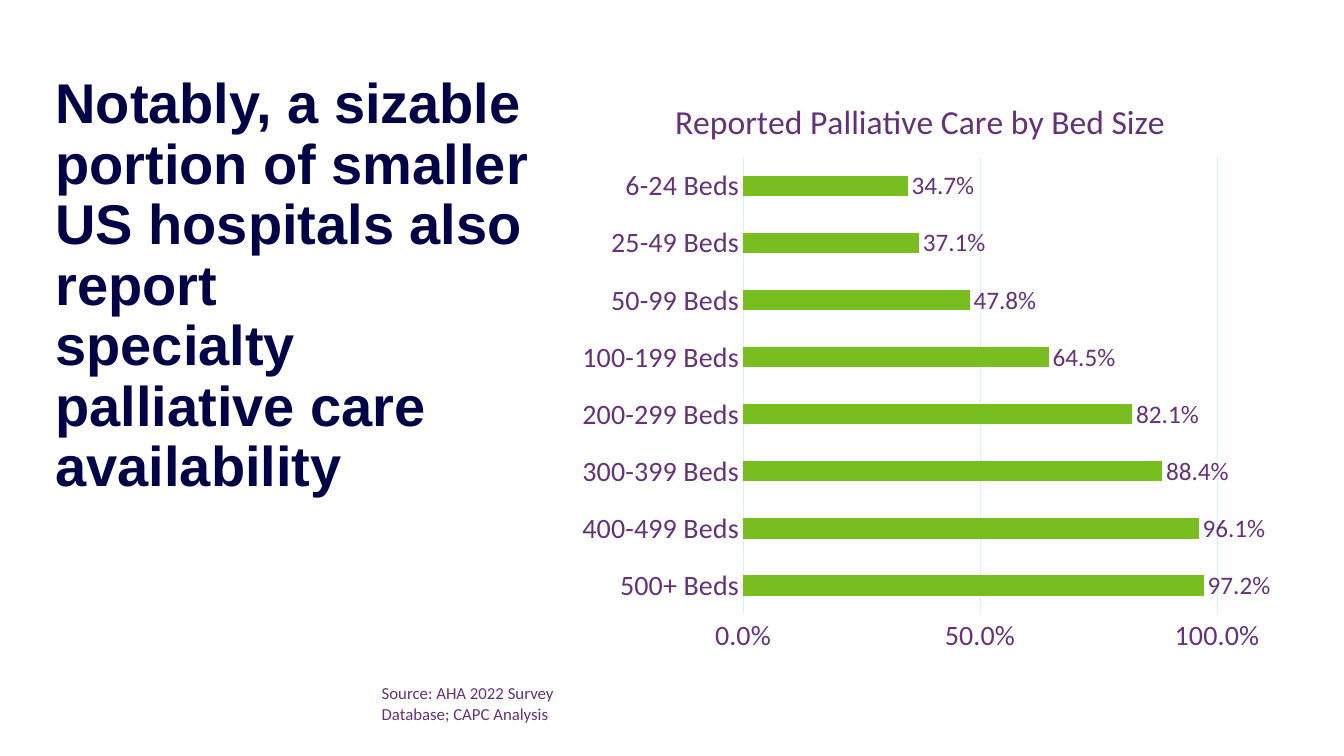
from dataclasses import dataclass

from lxml import etree
from pptx import Presentation
from pptx import util as u
from pptx.chart.data import CategoryChartData
from pptx.dml.color import RGBColor
from pptx.enum import chart as ch, text
from pptx.oxml import parse_xml
from pptx.oxml.ns import nsdecls

NAVY, PURPLE, GREEN, GRID = "000446", "653279", "78BE20", "D4F3FF"


@dataclass
class Box:
    left: float
    top: float
    width: float
    height: float

    def lengths(self) -> list[u.Length]:
        return [u.Cm(v) for v in (self.left, self.top, self.width, self.height)]


@dataclass
class Style:
    font: str
    size: float
    color: str
    bold: bool = False


@dataclass
class TextBlock:
    box: Box
    paragraphs: list[list[str]]  # lines of each paragraph, split at line breaks
    style: Style
    wrap: bool = True
    inset: bool = True
    line_spacing: float = 1.0


TEXTS = [
    TextBlock(
        Box(1.4, 1.9, 12.12, 10.77),
        [["Notably, a sizable portion of smaller US hospitals also report",
          "specialty palliative care availability"]],
        Style("Arial", 40, NAVY, True), inset=False, line_spacing=0.9),
    TextBlock(
        Box(9.37, 17.09, 4.9, 1.27),
        [["Source: AHA 2022 Survey"], ["Database; CAPC Analysis"]],
        Style("Calibri", 12, PURPLE), wrap=False),
]

CHART_BOX = Box(14.27, 1.9, 17.83, 14.76)
PLOT_LAYOUT = {"x": 0.25, "y": 0.14, "w": 0.67, "h": 0.78}
BED_SHARES = {
    "500+ Beds": 0.972,
    "400-499 Beds": 0.961,
    "300-399 Beds": 0.884,
    "200-299 Beds": 0.821,
    "100-199 Beds": 0.645,
    "50-99 Beds": 0.478,
    "25-49 Beds": 0.371,
    "6-24 Beds": 0.347,
}


def rgb(color: str) -> RGBColor:
    return RGBColor.from_string(color)


def set_font(font, style: Style) -> None:
    font.name = style.font
    font.size = u.Pt(style.size)
    font.bold = style.bold
    font.color.rgb = rgb(style.color)


def set_line(line, color: str) -> None:
    line.color.rgb = rgb(color)
    line.width = u.Pt(0.75)


def add_text(s, block: TextBlock) -> None:
    tf = s.shapes.add_textbox(*block.box.lengths()).text_frame
    tf.word_wrap = block.wrap
    tf.auto_size = text.MSO_AUTO_SIZE.SHAPE_TO_FIT_TEXT
    if not block.inset:
        tf.margin_left = tf.margin_top = tf.margin_right = tf.margin_bottom = 0
    for i, lines in enumerate(block.paragraphs):
        p = tf.add_paragraph() if i else tf.paragraphs[0]
        p.line_spacing = block.line_spacing
        for j, line in enumerate(lines):
            if j:
                p.add_line_break()
            r = p.add_run()
            r.text = line
            set_font(r.font, block.style)


def set_plot_layout(chart) -> None:
    """Fix the inner plot area as fractions of the chart."""
    area = chart._chartSpace.chart.plotArea
    for old in area.findall("{*}layout"):
        area.remove(old)
    layout = parse_xml(f"<c:layout {nsdecls('c')}><c:manualLayout/></c:layout>")
    values = {"layoutTarget": "inner", "xMode": "edge", "yMode": "edge", **PLOT_LAYOUT}
    for name, value in values.items():
        tag = etree.QName(layout).namespace
        etree.SubElement(layout[0], f"{{{tag}}}{name}").set("val", str(value))
    area.insert(0, layout)


def add_bed_chart(s) -> None:
    data = CategoryChartData(number_format="0.0%")
    data.categories = list(BED_SHARES)
    data.add_series("Series 1", list(BED_SHARES.values()))
    chart = s.shapes.add_chart(
        ch.XL_CHART_TYPE.BAR_CLUSTERED, *CHART_BOX.lengths(), data).chart
    axis_style = Style("Calibri", 20, PURPLE)
    set_font(chart.font, axis_style)
    chart.has_legend = False
    chart.has_title = True
    r = chart.chart_title.text_frame.paragraphs[0].add_run()
    r.text = "Reported Palliative Care by Bed Size"
    set_font(r.font, Style("Calibri", 24, PURPLE))
    chart.chart_title.include_in_layout = False
    set_plot_layout(chart)

    for axis in (chart.category_axis, chart.value_axis):
        axis.major_tick_mark = axis.minor_tick_mark = ch.XL_TICK_MARK.NONE
        set_font(axis.tick_labels.font, axis_style)
    set_line(chart.category_axis.format.line, GRID)
    shares = chart.value_axis
    shares.minimum_scale, shares.maximum_scale, shares.major_unit = 0, 1, 0.5
    shares.format.line.fill.background()
    set_line(shares.major_gridlines.format.line, GRID)
    shares.tick_labels.number_format = "0.0%"
    shares.tick_labels.number_format_is_linked = False

    plot = chart.plots[0]
    plot.gap_width = 182
    plot.vary_by_categories = False
    bars = plot.series[0]
    bars.format.fill.solid()
    bars.format.fill.fore_color.rgb = rgb(GREEN)
    labels = bars.data_labels
    labels.show_value = True
    labels.position = ch.XL_LABEL_POSITION.OUTSIDE_END
    labels.number_format = "0.0%"
    labels.number_format_is_linked = False
    set_font(labels.font, Style("Calibri", 18, PURPLE))


def main() -> None:
    prs = Presentation()
    prs.slide_width, prs.slide_height = u.Cm(33.87), u.Cm(19.05)
    s = prs.slides.add_slide(prs.slide_layouts[6])
    add_bed_chart(s)
    for block in TEXTS:
        add_text(s, block)
    prs.save("out.pptx")


if __name__ == "__main__":
    main()
